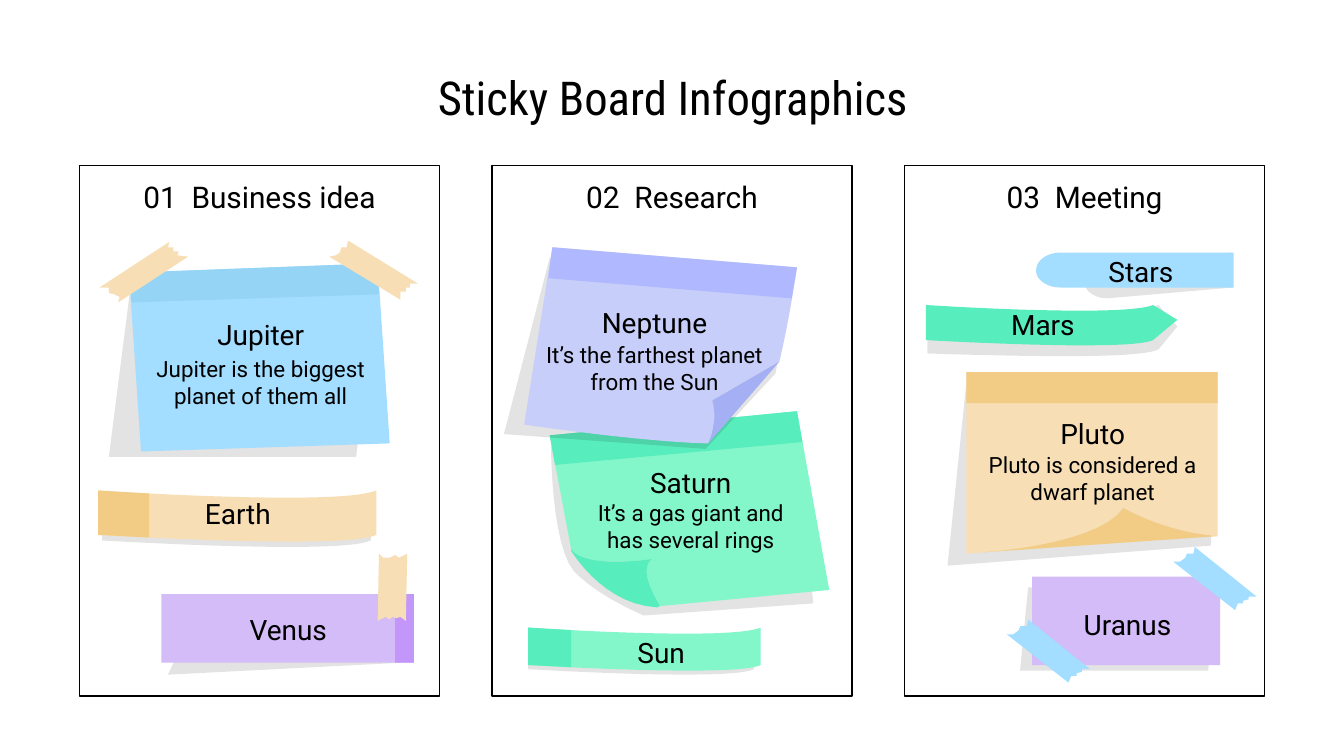
from dataclasses import dataclass

from lxml.etree import SubElement
from pptx import Presentation
from pptx.dml.color import RGBColor
from pptx.enum.shapes import MSO_SHAPE as Shape
from pptx.enum.text import MSO_ANCHOR as Anchor, PP_ALIGN as Align
from pptx.oxml.ns import qn
from pptx.util import Pt

PX = 9144  # EMU per px, 100 px to the inch
CURVE_STEPS = 12


@dataclass(frozen=True)
class Theme:
    ink: str = "000000"
    sand: str = "F7DEB5"
    ochre: str = "F2CC85"
    mint: str = "84F7CA"
    green: str = "58EDBD"
    periwinkle: str = "C7CEF9"
    iris: str = "B0B8FF"
    fold: str = "A4AFF4"
    sky: str = "A3DDFF"
    sea: str = "95D4F4"
    lilac: str = "D3BCF7"
    violet: str = "C397FA"
    shadow_alpha: int = 11
    border: float = 0.81
    title_font: str = "Roboto Condensed"
    font: str = "Roboto"
    title: int = 25
    heading: int = 16
    name: int = 15
    body: int = 12


THEME = Theme()


def emu(*lengths):
    return [round(length * PX) for length in lengths]


def paint(shape, color):
    shape.shadow.inherit = False
    shape.fill.solid()
    shape.fill.fore_color.rgb = RGBColor.from_string(color)
    shape.line.fill.background()
    return shape


def curve_points(start, curve):
    """Points along a cubic curve given as two controls and an end."""
    corners = [start, curve[:2], curve[2:4], curve[4:]]
    for step in range(1, CURVE_STEPS + 1):
        t = step / CURVE_STEPS
        weights = ((1 - t) ** 3, 3 * t * (1 - t) ** 2, 3 * t * t * (1 - t), t ** 3)
        yield tuple(sum(w * c[axis] for w, c in zip(weights, corners)) for axis in (0, 1))


def paper(group, color, *steps):
    """Closed outline: a step of two numbers is a corner, one of six a curve."""
    points = [steps[0]]
    for step in steps[1:]:
        points.extend([step] if len(step) == 2 else curve_points(points[-1], step))
    builder = group.shapes.build_freeform(*emu(*points[0]), scale=1.0)
    builder.add_line_segments([emu(*point) for point in points[1:]], close=True)
    return paint(builder.convert_to_shape(), color)


def shadow(group, *steps):
    shape = paper(group, THEME.ink, *steps)
    color = shape.fill._xPr.find(qn("a:solidFill")).find(qn("a:srgbClr"))
    SubElement(color, qn("a:alpha")).set("val", str(THEME.shadow_alpha * 1000))


def card(group, color, left, top, width, height):
    paint(group.shapes.add_shape(Shape.RECTANGLE, *emu(left, top, width, height)), color)


def ribbon_steps(left, top, width, height, tip=()):
    """Outline of a wavy strip, with an optional pointed tip."""
    def place(*pairs):
        return tuple(v * width + left if i % 2 == 0 else v * height + top
                     for i, v in enumerate(pairs))

    return (place(0, 0), place(0, .87), place(0, .87, .4, 1, .69, 1),
            place(.84, 1, .96, .97, 1, .87), *tip, place(1, 0),
            place(.95, .11, .82, .14, .68, .14), place(.38, .14, 0, 0, 0, 0))


def ribbon_note(group, front, back, color, end_color, end_width):
    left, top, _, height = front
    right = left + end_width
    shadow(group, *ribbon_steps(*back))
    paper(group, color, *ribbon_steps(*front))
    paper(group, end_color, (left, top), (left, top + .87 * height),
          (right, top + .92 * height), (right, top + .06 * height))


def slanted_tape(group, left, top):
    corners = ((16, 0), (15, 5), (10, 5), (9, 8), (5, 11), (0, 11), (46, 47),
               (48, 42), (52, 42), (52, 40), (56, 39), (56, 37), (62, 37))
    paper(group, THEME.sky, *((left + x, top + y) for x, y in corners))


def earth(group):
    ribbon_note(group, (73, 365, 207, 38), (76, 370, 200, 37), THEME.sand, THEME.ochre, 38)


def mars(group):
    shadow(group, (862, 227), (851, 232, 821, 233, 790, 233), (742, 233, 690, 230, 690, 230),
           (690, 263), (690, 263, 745, 265, 793, 265), (825, 265, 854, 264, 862, 260),
           (876, 243), (876, 243, 863, 228, 862, 227))
    paper(group, THEME.green, *ribbon_steps(689, 227, 169, 30, tip=((876, 238),)))


def sun(group):
    ribbon_note(group, (393, 467, 173, 32), (393, 471, 168, 31), THEME.mint, THEME.green, 32)


def saturn(group):
    curl = ((425, 409), (431, 416, 445, 418, 458, 418), (472, 418, 485, 416, 485, 416),
            (474, 425, 490, 448, 491, 451))
    shadow(group, (594, 314), (410, 332), (410, 332, 410, 405, 427, 425),
           (445, 444, 479, 458, 479, 458), (605, 449))
    paper(group, THEME.mint, (593, 306), (409, 324), *curl, (617, 439))
    paper(group, THEME.green, *curl, (489, 452), (453, 450, 431, 419, 425, 410))
    paper(group, THEME.green, (593, 306), (409, 324), (413, 346), (597, 329))


def neptune(group):
    curl = ((527, 330), (535, 313, 530, 298, 530, 298), (580, 269))
    shadow(group, (409, 192), (375, 323), (525, 334), (577, 278), (591, 207))
    paper(group, THEME.periwinkle, (411, 184), (390, 316), (390, 316, 478, 329, 527, 330),
          *curl[1:], (588, 235, 593, 199, 593, 199))
    paper(group, THEME.fold, *curl)
    paper(group, THEME.iris, (411, 184), (408, 207), (589, 222), (593, 199))


def jupiter(group):
    shadow(group, (98, 207), (81, 340), (265, 340), (282, 207))
    paper(group, THEME.sky, (281, 196), (96, 203), (105, 336), (290, 330))
    paper(group, THEME.sea, (281, 196), (96, 203), (98, 225), (282, 219))
    paper(group, THEME.sand, (126, 180), (74, 214), (81, 214), (81, 218), (85, 219), (89, 221),
          (88, 225), (140, 191), (132, 190), (133, 187), (129, 187), (129, 184), (125, 184))
    paper(group, THEME.sand, (259, 179), (258, 184), (254, 184), (253, 188), (250, 190),
          (245, 191), (298, 223), (298, 217), (302, 217), (302, 214), (305, 214),
          (305, 211), (311, 211))


def venus(group):
    shadow(group, (140, 470), (125, 502), (301, 493), (302, 470))
    card(group, THEME.lilac, 120, 442, 188, 51)
    card(group, THEME.violet, 294, 442, 14, 51)
    paper(group, THEME.sand, (282, 412), (281, 462), (287, 459), (290, 461), (292, 459),
          (295, 460), (298, 459), (302, 462), (303, 412), (297, 415), (294, 413),
          (290, 415), (285, 415))


def pluto(group):
    curl = ((732, 411), (759, 409, 820, 401, 836, 378), (836, 378, 866, 396, 906, 399))
    shadow(group, (719, 285), (705, 421), (901, 406), (906, 285))
    paper(group, THEME.sand, (719, 277), (719, 412), *curl, (906, 277))
    paper(group, THEME.ochre, *curl)
    card(group, THEME.ochre, 719, 277, 187, 23)


def stars(group):
    shadow(group, (917, 188), (824, 196), (815, 196, 807, 202, 807, 209), (807, 210),
           (807, 217, 815, 222, 824, 222), (917, 214))
    paper(group, THEME.sky, (789, 188), (779, 188, 771, 194, 771, 201), (771, 202),
          (771, 208, 779, 214, 789, 214), (918, 214), (918, 188))


def uranus(group):
    shadow(group, (765, 437), (759, 499), (899, 499), (905, 437))
    card(group, THEME.lilac, 768, 429, 140, 66)
    slanted_tape(group, 749, 461)
    slanted_tape(group, 873, 407)


def label(page, text, size, left, top, width, height, font=THEME.font, anchor=Anchor.MIDDLE):
    frame = page.shapes.add_textbox(*emu(left, top, width, height)).text_frame
    frame.word_wrap = True
    frame.vertical_anchor = anchor
    frame.margin_left = frame.margin_right = frame.margin_top = frame.margin_bottom = emu(10)[0]
    para = frame.paragraphs[0]
    para.alignment = Align.CENTER
    span = para.add_run()
    span.text = text
    span.font.size = Pt(size)
    span.font.name = font
    span.font.color.rgb = RGBColor.from_string(THEME.ink)


def panel(page, heading, left):
    border = page.shapes.add_shape(Shape.RECTANGLE, *emu(left, 123, 268, 395))
    border.shadow.inherit = False
    border.fill.background()
    border.line.color.rgb = RGBColor.from_string(THEME.ink)
    border.line.width = Pt(THEME.border)
    label(page, heading, THEME.heading, left, 123, 268, 51, anchor=Anchor.TOP)


def main():
    deck = Presentation()
    deck.slide_width, deck.slide_height = emu(1000, 562.5)
    page = deck.slides.add_slide(deck.slide_layouts[6])
    label(page, "Sticky Board Infographics", THEME.title, 78, 50, 845, 44, THEME.title_font)

    for note in (earth, mars, sun, saturn, neptune, jupiter, venus, pluto, stars, uranus):
        note(page.shapes.add_group_shape())
    for column, heading in enumerate(("01  Business idea", "02  Research", "03  Meeting")):
        panel(page, heading, 59 + 307 * column)

    for name, body, left, top, body_top in (
            ("Jupiter", "Jupiter is the biggest planet of them all", 100, 234, 265),
            ("Neptune", "It’s the farthest planet from the Sun", 393, 225, 254),
            ("Saturn", "It’s a gas giant and has several rings", 420, 344, 372),
            ("Pluto", "Pluto is considered a dwarf planet", 719, 308, 336)):
        label(page, name, THEME.name, left, top, 188, 29)
        label(page, body, THEME.body, left, body_top, 188, 39)
    for name, left, top, width, height in (
            ("Venus", 119, 454, 191, 29), ("Uranus", 771, 450, 136, 29),
            ("Sun", 424, 471, 136, 29), ("Stars", 781, 187, 136, 29),
            ("Earth", 73, 365, 208, 34), ("Mars", 689, 227, 174, 29)):
        label(page, name, THEME.name, left, top, width, height)
    deck.save("out.pptx")


if __name__ == "__main__":
    main()
